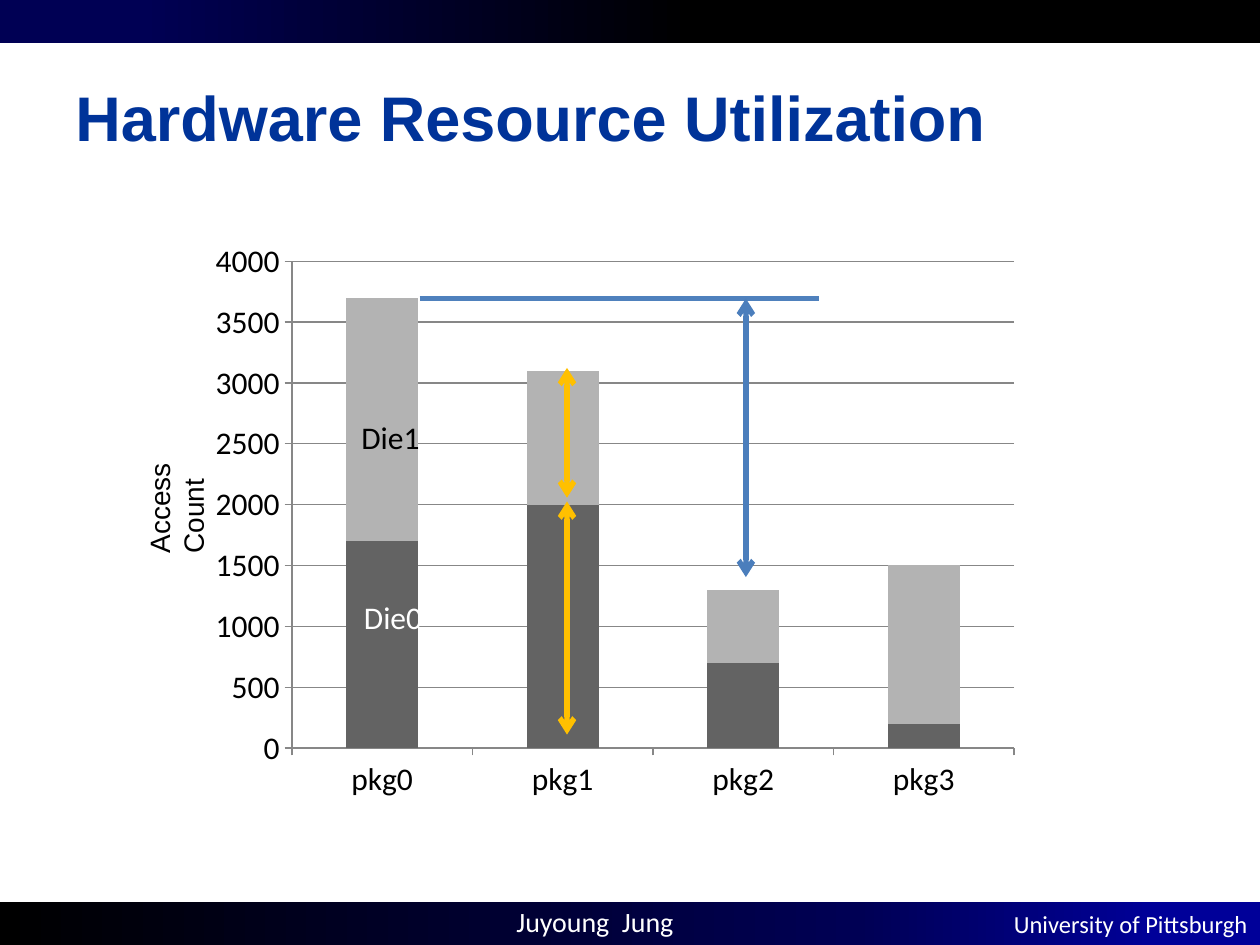
from pptx import Presentation
from pptx.chart.data import CategoryChartData
from pptx.dml.color import RGBColor
from pptx.enum.chart import XL_CHART_TYPE as CT, XL_TICK_MARK as Tick
from pptx.enum.shapes import MSO_CONNECTOR as Conn, MSO_SHAPE as Shape
from pptx.enum.text import MSO_ANCHOR as Anchor, PP_ALIGN as Align
from pptx.oxml.ns import qn
from pptx.util import Inches, Pt
from lxml.etree import SubElement

W, H, BAR_H = 10, 7.5, 0.34
BARS = [
    (0, [(11, "000054"), (55, "000000"), (94, "000000")]),
    (H - BAR_H, [(0, "000000"), (68, "000054"), (92, "000099")]),
]
CATEGORIES = ["pkg0", "pkg1", "pkg2", "pkg3"]
SERIES = [
    ("Series 1", [1700, 2000, 700, 200], "636363"),
    ("Series 2", [2000, 1100, 600, 1300], "B3B3B3"),
]
CHART_BOX = (1.58, 1.83, 6.6, 4.6)
WHITE, BLACK, GRID = "FFFFFF", "000000", "878787"
TEXTS = [
    ("Hardware Resource Utilization", (0.5, 0.3, 9, 1.25),
     dict(name="Arial", size=36, color="003399", bold=True), dict(vertical_anchor=Anchor.MIDDLE)),
    ("Juyoung  Jung", (4, 7.13, 1.58, 0.37), dict(size=16, color=WHITE), {}),
    ("University of Pittsburgh", (6, H - BAR_H, 4, BAR_H),
     dict(size=14, color=WHITE, align=Align.RIGHT), dict(vertical_anchor=Anchor.MIDDLE)),
    ("Access Count", (1.08, 3, 0.47, 1.49), dict(name="Arial", size=16), dict(vert="vert270")),
    ("Die1", (2.77, 3.27, 0.67, 0.4), dict(size=18), dict(word_wrap=False)),
    ("Die0", (2.79, 4.7, 0.67, 0.4), dict(size=18, color=WHITE), dict(word_wrap=False)),
]
LINES = [
    ((3.33, 2.37), (6.5, 2.37), "4F81BD", False),
    ((4.5, 3.98), (4.5, 5.83), "FFC000", True),
    ((4.5, 2.92), (4.5, 3.95), "FFC000", True),
    ((5.92, 4.58), (5.92, 2.37), "4B7EBC", True),
]


def rgb(value):
    """Turn a hex string into a colour."""
    return RGBColor.from_string(value)


def inches(values):
    """Turn numbers into inch lengths."""
    return [Inches(v) for v in values]


def set_font(font, name="Calibri", size=18, color=BLACK, bold=False):
    """Apply format values to a font."""
    for key, value in dict(name=name, size=Pt(size), bold=bold).items():
        setattr(font, key, value)
    font.color.rgb = rgb(color)


def add_bar(s, top, stops):
    """Add a full-width gradient bar."""
    sp = s.shapes.add_shape(Shape.RECTANGLE, *inches((0, top, W, BAR_H)))
    sp.shadow.inherit = False
    sp.line.fill.background()
    sp.fill.gradient()
    sp.fill.gradient_angle = 0
    stop_list = next(sp._element.iter(qn("a:gsLst")))
    stop_list.clear()
    for percent, color in stops:
        stop = SubElement(stop_list, qn("a:gs"), pos=str(percent * 1000))
        SubElement(stop, qn("a:srgbClr"), val=color)


def add_text(s, text, box, font, frame):
    """Add a one-paragraph text box."""
    tf = s.shapes.add_textbox(*inches(box)).text_frame
    for key, value in {"word_wrap": True, **frame}.items():
        if key == "vert":
            tf._txBody.bodyPr.set(key, value)
        else:
            setattr(tf, key, value)
    p = tf.paragraphs[0]
    p.alignment = font.get("align", Align.LEFT)
    r = p.add_run()
    r.text = text
    set_font(r.font, **{k: v for k, v in font.items() if k != "align"})


def add_line(s, start, end, color, arrows):
    """Add a straight line, with arrowheads at both ends if asked."""
    c = s.shapes.add_connector(Conn.STRAIGHT, *inches(start + end))
    c.line.width = Pt(3)
    c.line.color.rgb = rgb(color)
    if arrows:
        for tag in ("a:headEnd", "a:tailEnd"):
            SubElement(c.line._get_or_add_ln(), qn(tag), type="arrow")
    SubElement(c._element.spPr, qn("a:effectLst"))


def add_stacked_chart(s):
    """Add the stacked column chart of access counts."""
    data = CategoryChartData()
    data.categories = CATEGORIES
    for name, values, _ in SERIES:
        data.add_series(name, values)
    chart = s.shapes.add_chart(CT.COLUMN_STACKED, *inches(CHART_BOX), data).chart
    chart.has_legend = chart.has_title = False
    set_font(chart.font)
    plot = chart.plots[0]
    for key, value in dict(gap_width=150, overlap=100, vary_by_categories=False).items():
        setattr(plot, key, value)
    for series, (_, _, color) in zip(plot.series, SERIES):
        series.format.fill.solid()
        series.format.fill.fore_color.rgb = rgb(color)
    axis = chart.value_axis
    for key, value in dict(minimum_scale=0, maximum_scale=4000, major_unit=500,
                           has_major_gridlines=True).items():
        setattr(axis, key, value)
    for ax in (axis, chart.category_axis):
        ax.major_tick_mark = Tick.OUTSIDE
    for part in (axis, chart.category_axis, axis.major_gridlines):
        part.format.line.color.rgb = rgb(GRID)


def main():
    """Build and save the slide."""
    prs = Presentation()
    prs.slide_width, prs.slide_height = inches((W, H))
    s = prs.slides.add_slide(prs.slide_layouts[6])
    for bar in BARS:
        add_bar(s, *bar)
    add_stacked_chart(s)
    for line in LINES:
        add_line(s, *line)
    for text in TEXTS:
        add_text(s, *text)
    prs.save("out.pptx")


if __name__ == "__main__":
    main()
